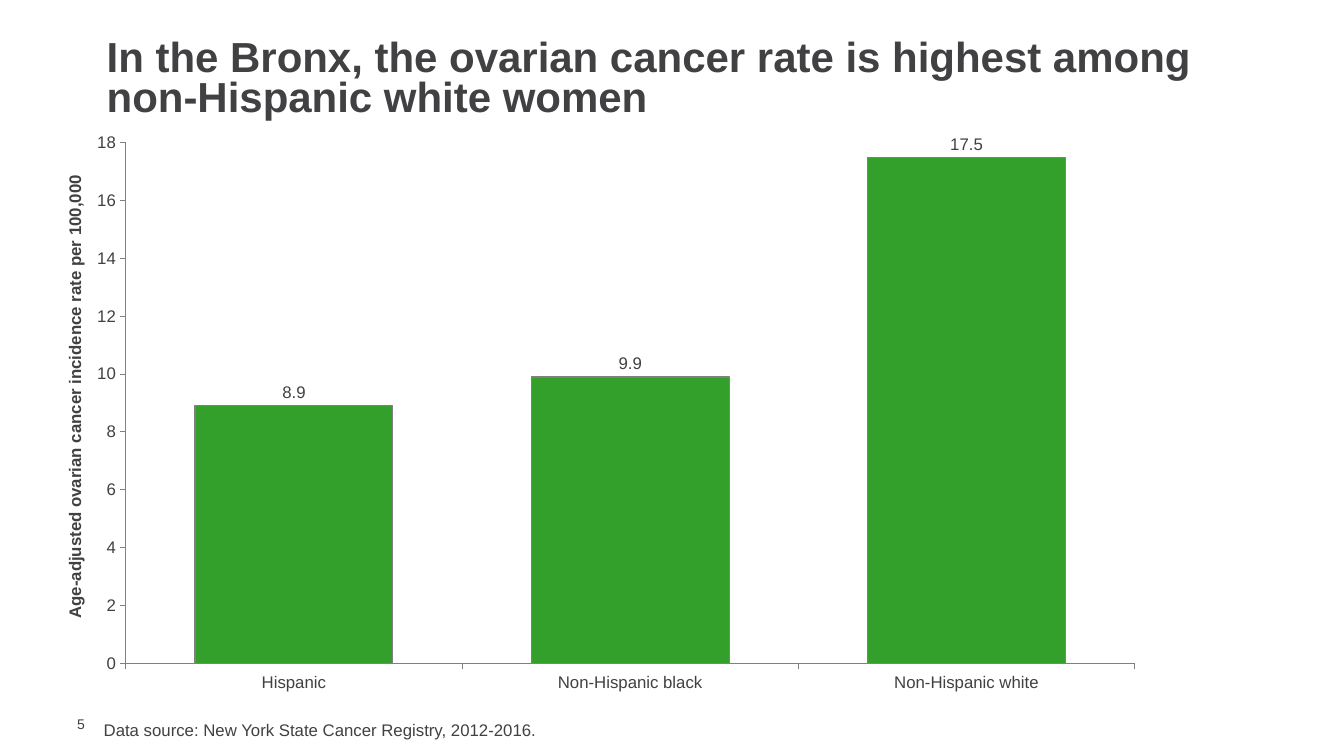
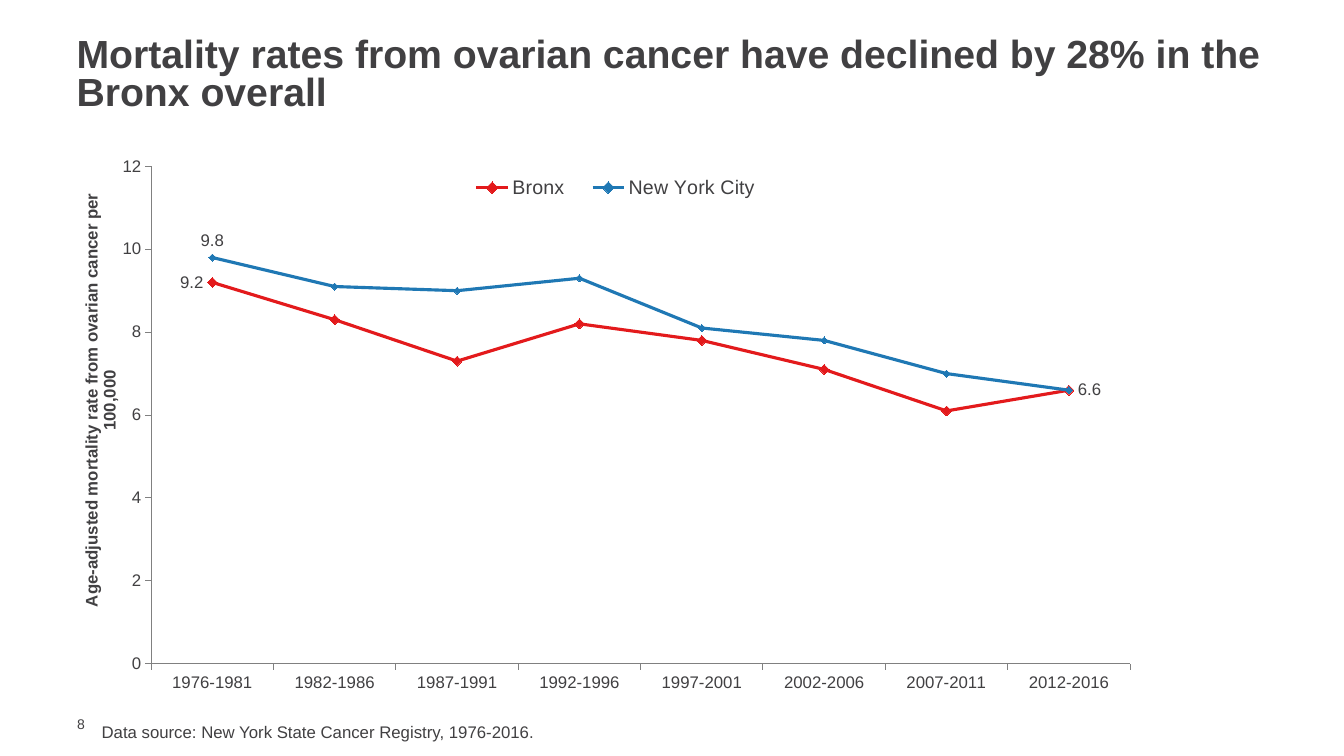
from lxml.etree import SubElement
from pptx import Presentation
from pptx.chart.data import CategoryChartData
from pptx.dml.color import RGBColor
from pptx.enum.chart import (XL_CHART_TYPE as ChartType, XL_LABEL_POSITION as LabelPos,
                             XL_LEGEND_POSITION as LegendPos, XL_MARKER_STYLE as Marker,
                             XL_TICK_MARK as Tick)
from pptx.enum.text import MSO_ANCHOR as Anchor, MSO_AUTO_SIZE as AutoSize, PP_ALIGN as Align
from pptx.oxml.ns import qn
from pptx.util import Pt

FONT = "Arial"
INK = RGBColor(0x41, 0x40, 0x42)
AXIS_GRAY = RGBColor(0x80, 0x80, 0x80)
GREEN = RGBColor(0x33, 0xA0, 0x2C)
RED = RGBColor(0xE3, 0x1A, 0x1C)
BLUE = RGBColor(0x1F, 0x78, 0xB4)
TITLE_ONLY = 5
NUMBER_BOX = (48, 511, 31, 12.5)

# Boxes are (left, top, width, height) in points; layouts are fractions of the chart.
INCIDENCE = dict(
    number="5",
    title="In the Bronx, the ovarian cancer rate is highest among non-Hispanic white women",
    title_box=(69, 24.5, 822, 65.5), title_size=30,
    source="Data source: New York State Cancer Registry, 2012-2016.",
    source_box=(67, 510.5, 714, 22),
    kind=ChartType.COLUMN_CLUSTERED, chart_box=(36, 90, 792, 412),
    plot=(0.068, 0.029, 0.91, 0.903), top=18,
    axis_title="Age-adjusted ovarian cancer incidence rate per 100,000",
    axis_title_at=(0.01, 0.08),
    categories=("Hispanic", "Non-Hispanic black", "Non-Hispanic white"),
    series=(("Series 1", (8.9, 9.9, 17.5)),),
)
MORTALITY = dict(
    number="8",
    title="Mortality rates from ovarian cancer have declined by 28% in the Bronx overall",
    title_box=(47.5, 24, 864, 61), title_size=28,
    source="Data source: New York State Cancer Registry, 1976-2016.",
    source_box=(65.5, 512, 714, 22),
    kind=ChartType.LINE_MARKERS, chart_box=(24, 112, 792, 402),
    plot=(0.106, 0.017, 0.883, 0.884), top=12,
    axis_title="Age-adjusted mortality rate from ovarian cancer per 100,000",
    axis_title_at=(0.04, 0.06),
    categories=("1976-1981", "1982-1986", "1987-1991", "1992-1996",
                "1997-2001", "2002-2006", "2007-2011", "2012-2016"),
    series=(("Bronx", (9.2, 8.3, 7.3, 8.2, 7.8, 7.1, 6.1, 6.6)),
            ("New York City", (9.8, 9.1, 9, 9.3, 8.1, 7.8, 7, 6.6))),
)
# Colour, marker size and labelled points of each mortality line
LINE_STYLES = (
    (RED, 7, {0: LabelPos.LEFT, 7: LabelPos.RIGHT}),
    (BLUE, 5, {0: LabelPos.ABOVE}),
)
LEGEND_LAYOUT = (0.38, 0.02, 0.29, 0.07)


def style_font(font, size, bold=False):
    font.name, font.size, font.bold = FONT, Pt(size), bold
    font.color.rgb = INK


def write_text(shape, text, size, bold=False, anchor=Anchor.TOP, line_spacing=None, insets=None):
    frame = shape.text_frame
    frame.word_wrap = True
    frame.auto_size = AutoSize.SHAPE_TO_FIT_TEXT
    frame.vertical_anchor = anchor
    if insets:
        (frame.margin_left, frame.margin_top,
         frame.margin_right, frame.margin_bottom) = map(Pt, insets)
    paragraph = frame.paragraphs[0]
    paragraph.alignment = Align.LEFT
    paragraph.line_spacing = line_spacing
    run = paragraph.add_run()
    run.text = text
    style_font(run.font, size, bold)


def set_layout(parent, index, place, inner=False):
    """Give a chart part a manual layout; index is its place among the children."""
    for old in parent.findall(qn("c:layout")):
        parent.remove(old)
    layout = SubElement(parent, qn("c:layout"))
    parent.insert(index, layout)
    manual = SubElement(layout, qn("c:manualLayout"))
    settings = [("layoutTarget", "inner")] if inner else []
    settings += [("xMode", "edge"), ("yMode", "edge")]
    settings += zip("xywh", place)
    for tag, value in settings:
        SubElement(manual, qn("c:" + tag)).set("val", str(value))


def style_axes(chart, content):
    for axis in (chart.category_axis, chart.value_axis):
        axis.has_major_gridlines = False
        axis.major_tick_mark, axis.minor_tick_mark = Tick.OUTSIDE, Tick.NONE
        axis.format.line.color.rgb = AXIS_GRAY
        axis.format.line.width = Pt(0.75)
        style_font(axis.tick_labels.font, 12)
    rates = chart.value_axis
    rates.minimum_scale, rates.maximum_scale, rates.major_unit = 0, content["top"], 2
    rates.tick_labels.number_format = "0"
    rates.tick_labels.number_format_is_linked = False
    frame = rates.axis_title.text_frame
    frame.text = content["axis_title"]
    style_font(frame.paragraphs[0].runs[0].font, 12, bold=True)
    title = chart.value_axis.axis_title._element
    for body in title.iter(qn("a:bodyPr")):
        body.set("rot", "-5400000")
        body.set("vert", "horz")
    set_layout(title, 1, content["axis_title_at"])


def style_columns(chart):
    plot = chart.plots[0]
    plot.gap_width = 70
    columns = plot.series[0]
    columns.format.fill.solid()
    columns.format.fill.fore_color.rgb = GREEN
    columns.format.line.color.rgb = AXIS_GRAY
    columns.format.line.width = Pt(0.75)
    labels = columns.data_labels
    labels.show_value = True
    labels.position = LabelPos.OUTSIDE_END
    style_font(labels.font, 12)


def style_lines(chart):
    for line, (color, marker_size, labelled) in zip(chart.plots[0].series, LINE_STYLES):
        line.smooth = False
        line.format.line.color.rgb = color
        line.format.line.width = Pt(2.25)
        line.marker.style, line.marker.size = Marker.DIAMOND, marker_size
        line.marker.format.fill.solid()
        line.marker.format.fill.fore_color.rgb = color
        line.marker.format.line.color.rgb = color
        line.data_labels.show_value = False
        for index, position in labelled.items():
            label = line.points[index].data_label
            style_font(label.font, 12)
            label.position = position
    chart.has_legend = True
    chart.legend.position = LegendPos.TOP
    chart.legend.include_in_layout = False
    style_font(chart.legend.font, 14)
    set_layout(chart.legend._element, 1, LEGEND_LAYOUT)


def add_rate_chart(slide, content):
    data = CategoryChartData()
    data.categories = content["categories"]
    for name, rates in content["series"]:
        data.add_series(name, rates)
    chart = slide.shapes.add_chart(content["kind"], *map(Pt, content["chart_box"]), data).chart
    chart.has_title = chart.has_legend = False
    style_font(chart.font, 10)
    chart.plots[0].vary_by_categories = False
    style_axes(chart, content)
    set_layout(chart._chartSpace.chart.plotArea, 0, content["plot"], inner=True)
    if content["kind"] == ChartType.COLUMN_CLUSTERED:
        style_columns(chart)
    else:
        style_lines(chart)


def add_rate_slide(deck, content):
    slide = deck.slides.add_slide(deck.slide_layouts[TITLE_ONLY])
    title = slide.shapes.title
    title.left, title.top, title.width, title.height = map(Pt, content["title_box"])
    write_text(title, content["title"], content["title_size"], bold=True,
               anchor=Anchor.MIDDLE, line_spacing=0.8)
    add_rate_chart(slide, content)
    number = slide.shapes.add_textbox(*map(Pt, NUMBER_BOX))
    write_text(number, content["number"], 10, anchor=Anchor.MIDDLE, insets=(7.2, 0, 0, 0))
    source = slide.shapes.add_textbox(*map(Pt, content["source_box"]))
    write_text(source, content["source"], 12)


def main():
    deck = Presentation()
    deck.slide_width, deck.slide_height = Pt(960), Pt(540)
    for content in (INCIDENCE, MORTALITY):
        add_rate_slide(deck, content)
    deck.save("out.pptx")


if __name__ == "__main__":
    main()
